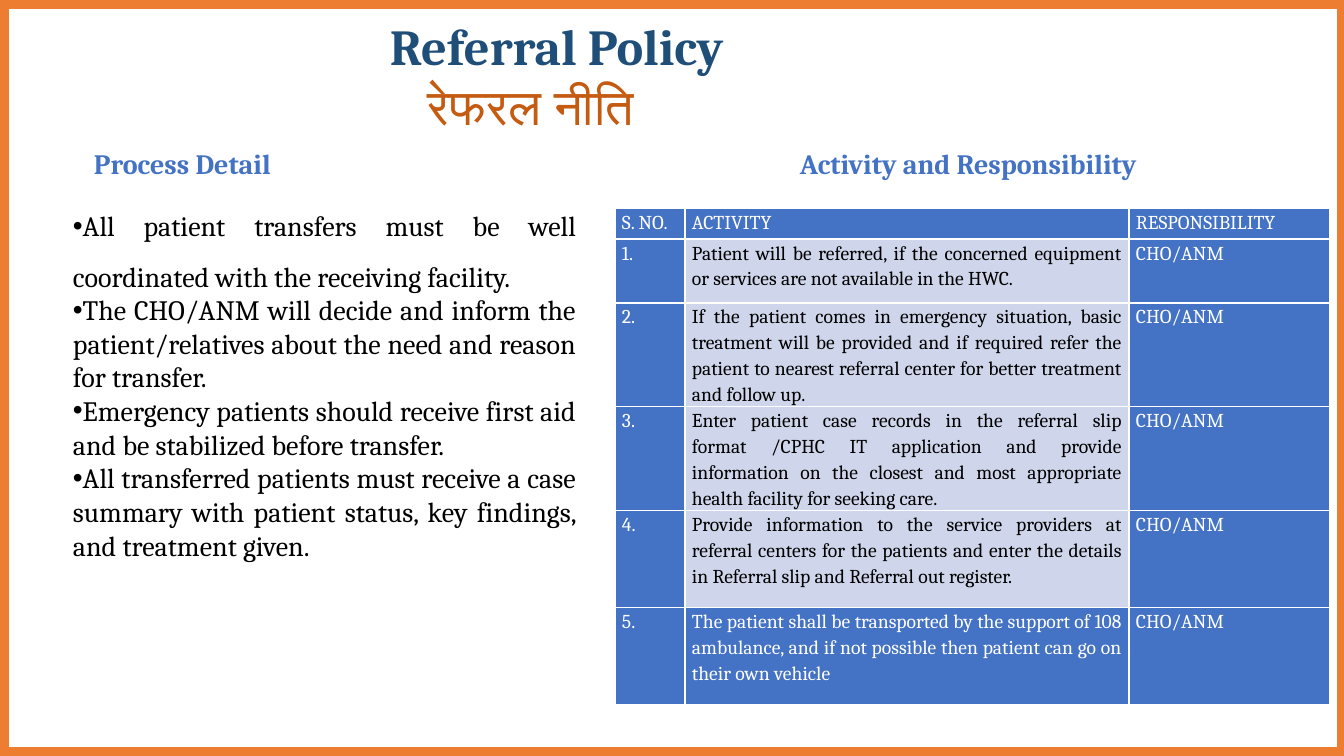
from dataclasses import dataclass
from typing import Any

from lxml.etree import SubElement
from pptx import Presentation
from pptx.dml.color import RGBColor as Rgb
from pptx.enum.shapes import MSO_SHAPE as Shape
from pptx.enum.text import MSO_AUTO_SIZE as AutoSize, PP_ALIGN as Align
from pptx.oxml import parse_xml
from pptx.oxml.ns import nsdecls, qn
from pptx.util import Emu, Pt

SLIDE_W, SLIDE_H = 1344, 756
EMU_PER_PX = 12192000 / SLIDE_W


@dataclass(frozen=True)
class Theme:
    font: str = "Cambria"
    orange: str = "ED7D31"
    rust: str = "C55A11"
    navy: str = "1F4E79"
    blue: str = "4472C4"
    pale: str = "CFD5EA"
    white: str = "FFFFFF"
    black: str = "000000"
    title_size: int = 36
    body_size: int = 20
    table_size: int = 14


THEME = Theme()


@dataclass(frozen=True)
class Line:
    text: str
    size: int
    color: str
    bold: bool = False
    bullet: bool = False
    indent: int = 0
    justified: bool = False
    spacing: float | None = None
    after: int | None = None


@dataclass(frozen=True)
class Block:
    left: int
    top: int
    width: int
    height: int
    lines: list[Line]


@dataclass(frozen=True)
class Step:
    activity: str
    height: int = 97
    fill: str = THEME.pale
    color: str = THEME.black


POLICIES = [
    "All patient transfers must be well coordinated with the receiving facility.",
    "The CHO/ANM will decide and inform the patient/relatives about the need and reason for transfer.",
    "Emergency patients should receive first aid and be stabilized before transfer.",
    "All transferred patients must receive a case summary with patient status, key findings, "
    "and treatment given.",
]
BLOCKS = [
    Block(380, 10, 409, 132, [
        Line("Referral Policy", THEME.title_size, THEME.navy, bold=True),
        Line("रेफरल नीति", THEME.title_size, THEME.rust, indent=38),
    ]),
    Block(63, 187, 523, 417, [
        Line(policy, THEME.body_size, THEME.black, bullet=True, justified=True,
             spacing=1.0 if number else 1.5)
        for number, policy in enumerate(POLICIES)
    ]),
    Block(84, 142, 409, 44, [Line("Process Detail", THEME.body_size, THEME.blue, bold=True)]),
    Block(790, 142, 468, 44,
          [Line("Activity and Responsibility", THEME.body_size, THEME.blue, bold=True)]),
]

TABLE_LEFT, TABLE_TOP = 615, 208
COLUMN_WIDTHS = [70, 444, 201]
HEADER_HEIGHT = 31
HEADINGS = ["S. NO.", "ACTIVITY", "RESPONSIBILITY"]
RESPONSIBLE = "CHO/ANM"
STEPS = [
    Step("Patient will be referred, if the concerned equipment or services are not available "
         "in the HWC.", height=64),
    Step("If the patient comes in emergency situation, basic treatment will be provided and if "
         "required refer the patient to nearest referral center for better treatment and follow up."),
    Step("Enter patient case records in the referral slip format /CPHC IT application and provide "
         "information on the closest and most appropriate health facility for seeking care."),
    Step("Provide information to the service providers at referral centers for the patients and "
         "enter the details in Referral slip and Referral out register."),
    Step("The patient shall be transported by the support of 108 ambulance, and if not possible "
         "then patient can go on their own vehicle", fill=THEME.blue, color=THEME.white),
]


def px(length: int) -> Emu:
    return Emu(round(length * EMU_PER_PX))


def set_all(target: Any, values: dict[str, Any]) -> None:
    for name, value in values.items():
        setattr(target, name, value)


def write_line(paragraph: Any, line: Line) -> None:
    set_all(paragraph, {
        "alignment": Align.JUSTIFY if line.justified else Align.LEFT,
        "line_spacing": line.spacing,
        "space_after": None if line.after is None else Pt(line.after),
    })
    run = paragraph.add_run()
    run.text = line.text
    set_all(run.font, {"name": THEME.font, "size": Pt(line.size), "bold": line.bold})
    run.font.color.rgb = Rgb.from_string(line.color)
    properties = paragraph._p.get_or_add_pPr()
    if line.indent:
        properties.set("marL", str(px(line.indent)))
    if line.bullet:
        SubElement(properties, qn("a:buFont"), typeface="Arial")
        SubElement(properties, qn("a:buChar"), char="•")


def draw_frame(slide: Any) -> None:
    frame = slide.shapes.add_shape(Shape.FRAME, 0, 0, px(SLIDE_W + 2), px(SLIDE_H))
    frame.adjustments[0] = 8 / SLIDE_H
    frame.shadow.inherit = False
    frame.fill.solid()
    frame.fill.fore_color.rgb = frame.line.color.rgb = Rgb.from_string(THEME.orange)
    frame.line.width = Pt(1)


def draw_block(slide: Any, block: Block) -> None:
    bounds = (block.left, block.top, block.width, block.height)
    frame = slide.shapes.add_textbox(*map(px, bounds)).text_frame
    set_all(frame, {"word_wrap": True, "auto_size": AutoSize.SHAPE_TO_FIT_TEXT})
    for number, line in enumerate(block.lines):
        write_line(frame.add_paragraph() if number else frame.paragraphs[0], line)


def fill_cell(cell: Any, text: str, fill: str, color: str) -> None:
    set_all(cell, {"margin_left": px(7), "margin_right": px(7),
                   "margin_top": 0, "margin_bottom": 0})
    cell.fill.solid()
    cell.fill.fore_color.rgb = Rgb.from_string(fill)
    for position, side in enumerate("LRTB"):
        cell._tc.get_or_add_tcPr().insert(position, parse_xml(
            f'<a:ln{side} {nsdecls("a")} w="{Pt(1)}"><a:solidFill>'
            f'<a:srgbClr val="{THEME.white}"/></a:solidFill></a:ln{side}>'))
    write_line(cell.text_frame.paragraphs[0], Line(
        text, THEME.table_size, color, justified=True, spacing=1.15, after=10))


def draw_activities(slide: Any) -> None:
    heights = [HEADER_HEIGHT, *(step.height for step in STEPS)]
    table = slide.shapes.add_table(
        len(heights), len(COLUMN_WIDTHS), px(TABLE_LEFT), px(TABLE_TOP),
        px(sum(COLUMN_WIDTHS)), px(sum(heights))).table
    set_all(table, {"first_row": False, "horz_banding": False})
    for column, width in zip(table.columns, COLUMN_WIDTHS):
        column.width = px(width)
    for row, height in zip(table.rows, heights):
        row.height = px(height)
    for column, heading in enumerate(HEADINGS):
        fill_cell(table.cell(0, column), heading, THEME.blue, THEME.white)
    for number, step in enumerate(STEPS, start=1):
        fill_cell(table.cell(number, 0), f"{number}.", THEME.blue, THEME.white)
        fill_cell(table.cell(number, 1), step.activity, step.fill, step.color)
        fill_cell(table.cell(number, 2), RESPONSIBLE, THEME.blue, THEME.white)


def main() -> None:
    deck = Presentation()
    set_all(deck, {"slide_width": px(SLIDE_W), "slide_height": px(SLIDE_H)})
    slide = deck.slides.add_slide(deck.slide_layouts[6])
    draw_frame(slide)
    draw_activities(slide)
    for block in BLOCKS:
        draw_block(slide, block)
    deck.save("out.pptx")


if __name__ == "__main__":
    main()
